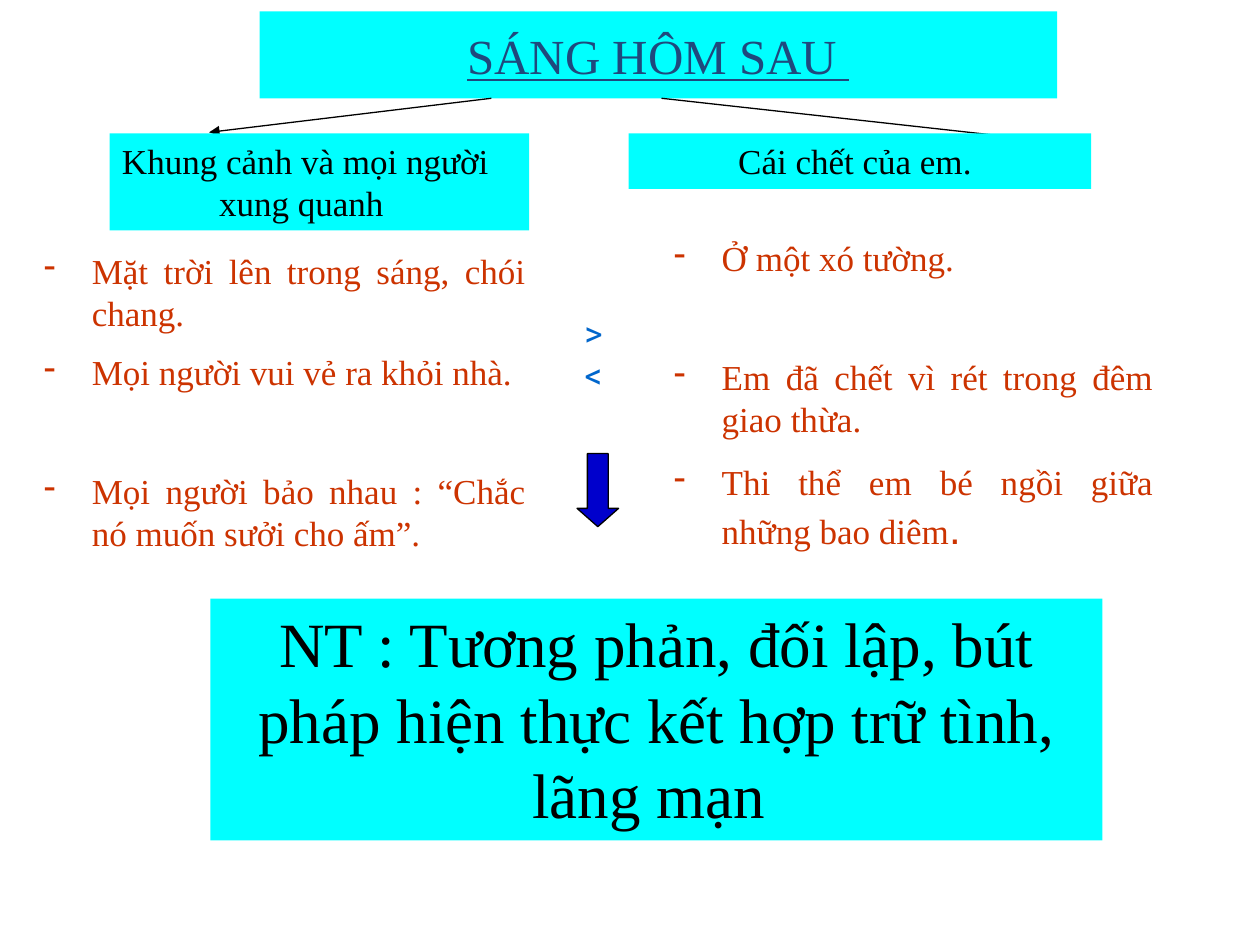
from dataclasses import dataclass

from lxml.etree import SubElement
from pptx import Presentation
from pptx.dml.color import RGBColor
from pptx.enum.shapes import MSO_CONNECTOR, MSO_SHAPE
from pptx.enum.text import MSO_ANCHOR, MSO_AUTO_SIZE, PP_ALIGN
from pptx.oxml.ns import qn
from pptx.util import Inches, Pt


@dataclass(frozen=True)
class Theme:
    serif: str = "Times New Roman"
    sans: str = "Arial"
    symbol: str = "Roboto"
    panel: str = "00FFFF"
    title: str = "1F497D"
    ink: str = "000000"
    detail: str = "CC3300"
    contrast: str = "0066CC"
    glow: str = "99CCFF"
    arrow: str = "0000CC"
    title_size: int = 28
    body_size: int = 20
    stop_size: int = 24
    conclusion_size: int = 36
    line_width: float = 0.75
    glow_width: float = 1.5


def apply_format(target, values):
    for name, value in values.items():
        setattr(target, name, value)


class SlideBuilder:
    def __init__(self, slide, theme):
        self.slide = slide
        self.theme = theme

    def paint(self, fill, color):
        fill.solid()
        fill.fore_color.rgb = RGBColor.from_string(color)

    def outline(self, line):
        self.paint(line.fill, self.theme.ink)
        line.width = Pt(self.theme.line_width)

    def add_run(self, paragraph, text, size, color, font=None, underline=None):
        run = paragraph.add_run()
        run.text = text
        apply_format(run.font, {
            "name": font or self.theme.serif,
            "size": Pt(size),
            "underline": underline,
        })
        run.font.color.rgb = RGBColor.from_string(color)
        return run

    def indent(self, paragraph, left, first_line=0.0):
        properties = paragraph._p.get_or_add_pPr()
        properties.set("marL", str(Inches(left)))
        properties.set("indent", str(Inches(first_line)))
        return properties

    def title(self, text, left, top, width, height):
        shape = self.slide.shapes.title
        apply_format(shape, {
            "left": Inches(left), "top": Inches(top),
            "width": Inches(width), "height": Inches(height),
        })
        self.paint(shape.fill, self.theme.panel)
        apply_format(shape.text_frame, {
            "auto_size": MSO_AUTO_SIZE.NONE,
            "vertical_anchor": MSO_ANCHOR.MIDDLE,
            "word_wrap": True,
        })
        paragraph = shape.text_frame.paragraphs[0]
        paragraph.alignment = PP_ALIGN.CENTER
        self.add_run(paragraph, text, self.theme.title_size, self.theme.title, underline=True)

    def shape(self, kind, box, color):
        shape = self.slide.shapes.add_shape(kind, *map(Inches, box))
        shape.shadow.inherit = False
        self.paint(shape.fill, color)
        return shape

    def panel(self, text, box, size, alignment=PP_ALIGN.LEFT, left=0.0, first_line=0.0):
        shape = self.shape(MSO_SHAPE.RECTANGLE, box, self.theme.panel)
        shape.line.fill.background()
        apply_format(shape.text_frame, {"word_wrap": True, "vertical_anchor": MSO_ANCHOR.TOP})
        paragraph = shape.text_frame.paragraphs[0]
        paragraph.alignment = alignment
        self.indent(paragraph, left, first_line)
        self.add_run(paragraph, text, size, self.theme.ink)

    def text_box(self, box, wrap):
        frame = self.slide.shapes.add_textbox(*map(Inches, box)).text_frame
        frame.word_wrap = wrap
        return frame

    def bullets(self, items, box):
        frame = self.text_box(box, True)
        for index, (text, space) in enumerate(items):
            paragraph = frame.add_paragraph() if index else frame.paragraphs[0]
            apply_format(paragraph, {"alignment": PP_ALIGN.JUSTIFY, "space_before": Pt(space)})
            properties = self.indent(paragraph, 0.38, -0.38)
            SubElement(properties, qn("a:buChar")).set("char", "-")
            self.add_run(paragraph, text, self.theme.body_size, self.theme.detail)
        return frame

    def contrast_sign(self, text, box):
        frame = self.text_box(box, False)
        paragraph = frame.paragraphs[0]
        paragraph.alignment = PP_ALIGN.CENTER
        run = self.add_run(paragraph, text, self.theme.body_size,
                           self.theme.contrast, self.theme.symbol)
        properties = run.font._element
        line = SubElement(properties, qn("a:ln"), w=str(Pt(self.theme.glow_width)))
        fill = SubElement(line, qn("a:solidFill"))
        SubElement(fill, qn("a:srgbClr"), val=self.theme.glow)
        properties.insert(0, line)

    def arrow(self, start, end):
        connector = self.slide.shapes.add_connector(
            MSO_CONNECTOR.STRAIGHT, *map(Inches, start + end))
        self.outline(connector.line)
        SubElement(connector.line._get_or_add_ln(), qn("a:tailEnd")).set("type", "triangle")
        SubElement(connector._element.spPr, qn("a:effectLst"))

    def down_arrow(self, box):
        shape = self.shape(MSO_SHAPE.DOWN_ARROW, box, self.theme.arrow)
        self.outline(shape.line)
        shape.adjustments[0] = 0.5
        shape.adjustments[1] = 0.44


def main():
    presentation = Presentation()
    presentation.slide_width = Inches(10)
    presentation.slide_height = Inches(7.5)
    theme = Theme()
    slide = presentation.slides.add_slide(presentation.slide_layouts[5])
    builder = SlideBuilder(slide, theme)

    builder.title("SÁNG HÔM SAU ", 2.06, 0.09, 6.33, 0.69)
    builder.arrow((3.9, 0.78), (1.66, 1.05))
    builder.arrow((5.25, 0.78), (8.5, 1.14))
    builder.panel("Khung cảnh và mọi người xung quanh", (0.87, 1.06, 3.33, 0.77),
                  theme.body_size, left=0.77, first_line=-0.77)
    builder.panel("Cái chết của em.", (4.99, 1.06, 3.67, 0.44), theme.body_size, left=0.77)

    near, far = 10, 44
    builder.bullets([
        ("Mặt trời lên trong sáng, chói chang.", 0),
        ("Mọi người vui vẻ ra khỏi nhà.", near),
        ("Mọi người bảo nhau : “Chắc nó muốn sưởi cho ấm”.", far),
    ], (0.25, 1.93, 4.02, 3.23))
    death = builder.bullets([
        ("Ở một xó tường.", 0),
        ("Em đã chết vì rét trong đêm giao thừa.", far),
        ("Thi thể em bé ngồi giữa những bao diêm", near + 2),
    ], (5.25, 1.83, 4, 2.69))
    builder.add_run(death.paragraphs[-1], ".", theme.stop_size, theme.detail, theme.sans)

    builder.panel("NT : Tương phản, đối lập, bút pháp hiện thực kết hợp trữ tình, lãng mạn ",
                  (1.67, 4.75, 7.08, 1.92), theme.conclusion_size, PP_ALIGN.CENTER)
    builder.contrast_sign("> <", (4.5, 2.42, 0.42, 0.33))
    builder.down_arrow((4.58, 3.6, 0.33, 0.58))
    presentation.save("out.pptx")


if __name__ == "__main__":
    main()
